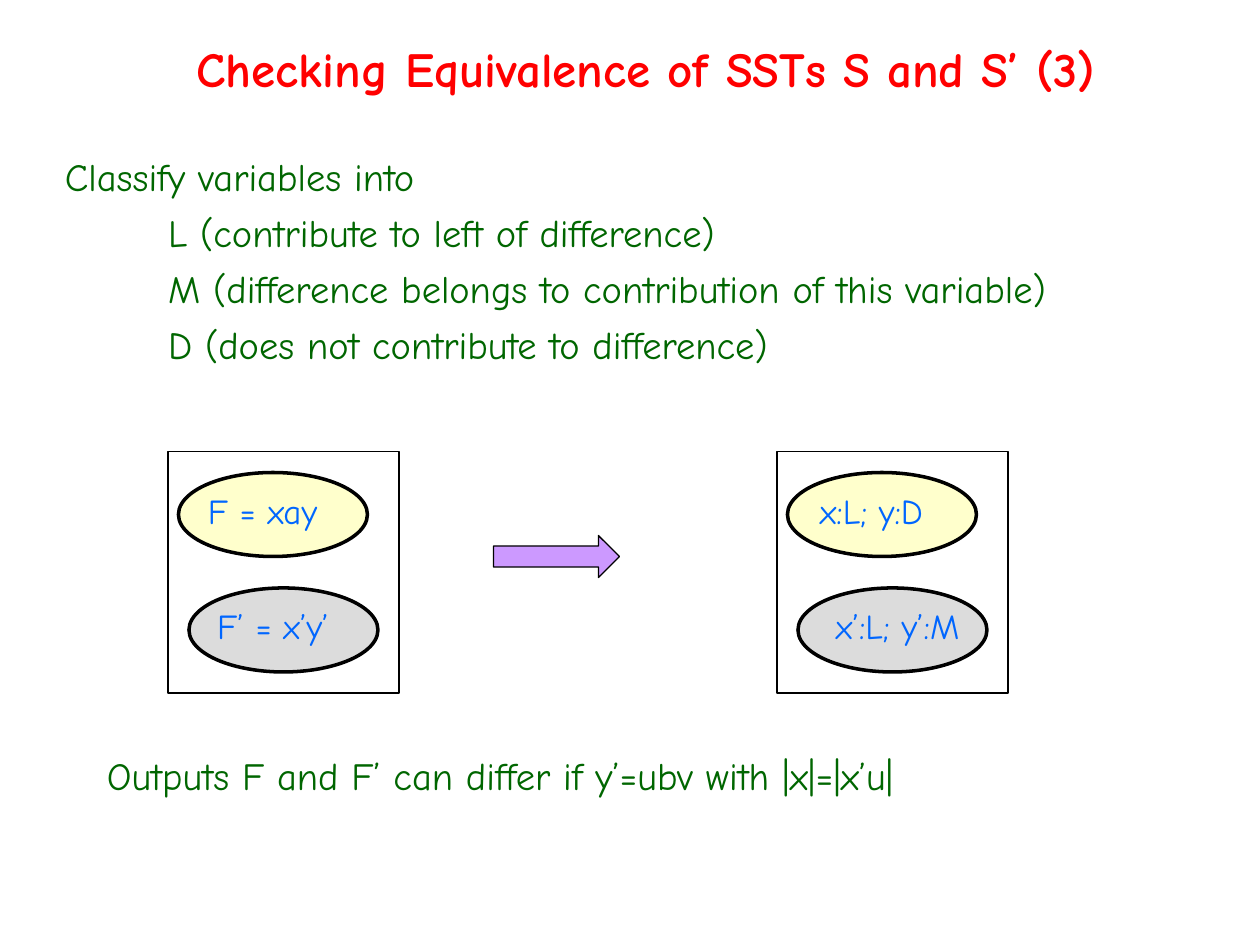
from dataclasses import dataclass

from pptx import Presentation
from pptx.dml.color import RGBColor
from pptx.enum.shapes import MSO_SHAPE as Shape
from pptx.enum.text import MSO_ANCHOR as Anchor, PP_ALIGN as Align
from pptx.util import Pt


@dataclass(frozen=True)
class Theme:
    font: str = "Comic Neue"
    title_color: str = "FF0000"
    body_color: str = "006600"
    label_color: str = "0066FF"
    outline: str = "000000"
    first_fill: str = "FFFFCC"
    second_fill: str = "DCDCDC"
    arrow_fill: str = "CC99FF"
    title_size: float = 28
    body_size: float = 22
    label_size: float = 20
    body_gap: float = 5.5


class SlideBuilder:
    def __init__(self, slide, theme):
        self.slide = slide
        self.theme = theme

    def _text(self, box, lines, size, color, align, bold=False, gap=0, anchor=Anchor.TOP):
        """Add a text box; lines holds (text, left indent) pairs."""
        frame = self.slide.shapes.add_textbox(*map(Pt, box)).text_frame
        frame.word_wrap = True
        frame.vertical_anchor = anchor
        for index, (text, indent) in enumerate(lines):
            paragraph = frame.add_paragraph() if index else frame.paragraphs[0]
            paragraph.alignment = align
            paragraph.space_before = Pt(gap)
            if indent:
                properties = paragraph._p.get_or_add_pPr()
                properties.set("marL", str(Pt(indent)))
                properties.set("indent", "0")
            run = paragraph.add_run()
            run.text = text
            run.font.name = self.theme.font
            run.font.size = Pt(size)
            run.font.bold = bold
            run.font.color.rgb = RGBColor.from_string(color)

    def title(self, box, text):
        self._text(box, [(text, 0)], self.theme.title_size, self.theme.title_color,
                   Align.CENTER, bold=True, anchor=Anchor.MIDDLE)

    def body(self, box, lines):
        self._text(box, lines, self.theme.body_size, self.theme.body_color,
                   Align.LEFT, gap=self.theme.body_gap)

    def label(self, box, text):
        self._text(box, [(text, 0)], self.theme.label_size, self.theme.label_color,
                   Align.CENTER)

    def shape(self, kind, box, fill=None, line_width=0.75):
        shape = self.slide.shapes.add_shape(kind, *map(Pt, box))
        shape.shadow.inherit = False
        if fill:
            shape.fill.solid()
            shape.fill.fore_color.rgb = RGBColor.from_string(fill)
        else:
            shape.fill.background()
        shape.line.color.rgb = RGBColor.from_string(self.theme.outline)
        shape.line.width = Pt(line_width)

    def state(self, left, top, fill, text, label_width):
        """Draw an ellipse with its label."""
        self.shape(Shape.OVAL, (left, top, 108, 48), fill, line_width=2)
        self.label((left, top + 6, label_width, 32), text)

    def panel(self, left, top, first, second):
        """Draw a frame with two states, each given as (text, label width)."""
        self.shape(Shape.RECTANGLE, (left, top, 132, 138))
        self.state(left + 6, top + 12, self.theme.first_fill, *first)
        self.state(left + 12, top + 78, self.theme.second_fill, *second)


def main():
    deck = Presentation()
    deck.slide_width, deck.slide_height = Pt(720), Pt(540)
    builder = SlideBuilder(deck.slides.add_slide(deck.slide_layouts[6]), Theme())

    builder.title((18, 18, 702, 42), "Checking Equivalence of SSTs S and S’ (3)")
    variable_classes = [
        "L (contribute to left of difference)",
        "M (difference belongs to contribution of this variable)",
        "D (does not contribute to difference)",
    ]
    builder.body((24, 84, 642, 132),
                 [("Classify variables into", 6)] + [(text, 65) for text in variable_classes])

    builder.panel(96, 258, ("F = xay", 96), ("F’ = x’y’", 96))
    builder.shape(Shape.RIGHT_ARROW, (282, 306, 72, 24), builder.theme.arrow_fill)
    builder.panel(444, 258, ("x:L; y:D", 96), ("x’:L; y’:M", 114))

    builder.body((54, 426, 624, 48),
                 [("Outputs F and F’ can differ if y’=ubv with |x|=|x’u|", 0)])
    deck.save("out.pptx")


if __name__ == "__main__":
    main()
